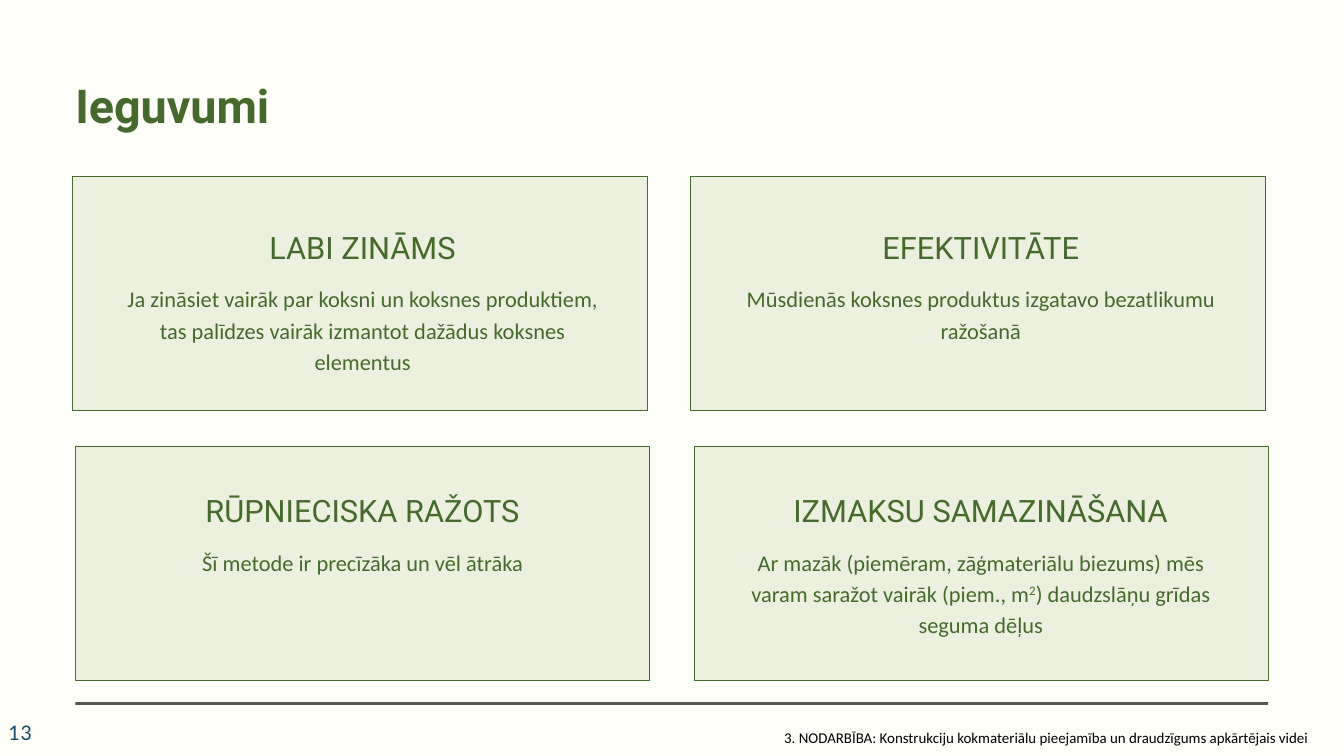
"""Build the slide on the benefits of structural timber."""
from pptx import Presentation
from pptx.dml.color import RGBColor
from pptx.enum.shapes import MSO_SHAPE as Shape
from pptx.enum.text import MSO_ANCHOR as Anchor, PP_ALIGN as Align
from pptx.util import Pt

PX = 9144
GREEN = "456A2C"
CARDS = [
    (108, 262, 170, 338, "LABI ZINĀMS",
     ["Ja zināsiet vairāk par koksni un koksnes produktiem, "
      "tas palīdzes vairāk izmantot dažādus koksnes elementus"]),
    (1028, 262, 1090, 338, "EFEKTIVITĀTE",
     ["Mūsdienās koksnes produktus izgatavo bezatlikumu ražošanā"]),
    (112, 664, 170, 730, "RŪPNIECISKA RAŽOTS",
     ["Šī metode ir precīzāka un vēl ātrāka"]),
    (1033, 664, 1090, 730, "IZMAKSU SAMAZINĀŠANA",
     ["Ar mazāk (piemēram, zāģmateriālu biezums) mēs varam saražot vairāk (piem., m",
      "2", ") daudzslāņu grīdas seguma dēļus"]),
]


def write_text(shape, box, runs, size, font, color=GREEN, spacing=None, align=Align.LEFT):
    shape.left, shape.top, shape.width, shape.height = [value * PX for value in box]
    frame = shape.text_frame
    frame.word_wrap = True
    frame.vertical_anchor = Anchor.TOP
    frame.margin_left = frame.margin_right = frame.margin_top = frame.margin_bottom = 0
    paragraph = frame.paragraphs[0]
    paragraph.alignment = align
    if spacing:
        paragraph.line_spacing = Pt(spacing)
    paragraph.font.size = Pt(size)
    paragraph.font.name = font
    paragraph.font.color.rgb = RGBColor.from_string(color)
    for text in runs:
        paragraph.add_run().text = text
    return paragraph


def add_box(box, fill, line=None):
    shape = slide.shapes.add_shape(Shape.RECTANGLE, *[value * PX for value in box])
    shape.shadow.inherit = False
    shape.fill.solid()
    shape.fill.fore_color.rgb = RGBColor.from_string(fill)
    if line:
        shape.line.color.rgb = RGBColor.from_string(line)
        shape.line.width = Pt(0.75)
    else:
        shape.line.fill.background()


presentation = Presentation()
presentation.slide_width, presentation.slide_height = 2000 * PX, 1125 * PX
slide = presentation.slides.add_slide(presentation.slide_layouts[5])
slide.background.fill.solid()
slide.background.fill.fore_color.rgb = RGBColor.from_string("FEFFF8")

title = write_text(slide.shapes.title, (112, 105, 775, 86), ["Ieguvumi"], 50, "Roboto", spacing=66.8)
title.font.bold = True

for left, top, text_left, text_top, heading, runs in CARDS:
    add_box((left, top, 855, 348), "EBF1DE", GREEN)
    write_text(slide.shapes.add_textbox(0, 0, 0, 0), (text_left, text_top, 739, 54),
               [heading], 33, "Roboto", spacing=41.2, align=Align.CENTER)
    body = write_text(slide.shapes.add_textbox(0, 0, 0, 0), (text_left, text_top + 80, 739, 143),
                      runs, 24, "Calibri", spacing=33.6, align=Align.CENTER)
    for superscript in body.runs[1:2]:
        superscript.font._element.set("baseline", "30000")

add_box((112, 1045, 1775, 4), "52584D")

number_box = slide.shapes.add_textbox(0, 0, 0, 0)
number = write_text(number_box, (12, 1069, 223, 40), ["13"], 24, "Calibri", "1E4D65")
number_box.text_frame.vertical_anchor = Anchor.MIDDLE
number.runs[0].font._element.set("spc", "120")

write_text(slide.shapes.add_textbox(0, 0, 0, 0), (1167, 1060, 833, 101),
           ["3. NODARBĪBA: Konstrukciju kokmateriālu pieejamība un draudzīgums apkārtējais videi"],
           16, "Calibri", "000000", spacing=36.5)

presentation.save("out.pptx")
